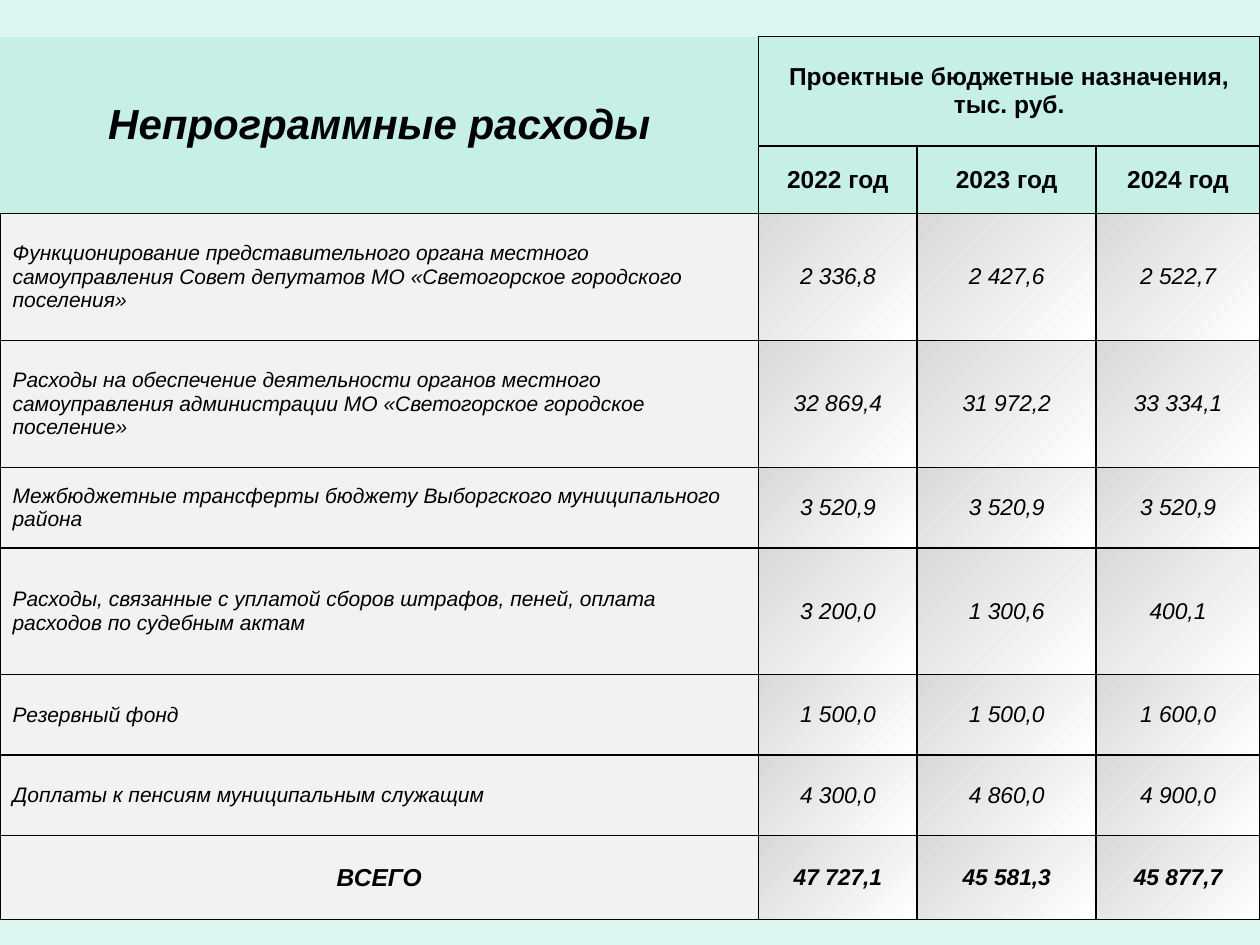
from lxml import etree
from pptx import Presentation
from pptx.dml.color import RGBColor
from pptx.enum.text import MSO_ANCHOR, PP_ALIGN
from pptx.oxml.ns import qn
from pptx.util import Inches, Pt

LEFT, CENTER = PP_ALIGN.LEFT, PP_ALIGN.CENTER
MIDDLE = MSO_ANCHOR.MIDDLE

BLACK = RGBColor(0x00, 0x00, 0x00)
WHITE = RGBColor(0xFF, 0xFF, 0xFF)
PALE_MINT = RGBColor(0xDE, 0xF6, 0xF1)
MINT = RGBColor(0xC6, 0xF0, 0xE7)
LIGHT_GRAY = RGBColor(0xF2, 0xF2, 0xF2)
GRAY = RGBColor(0xD9, 0xD9, 0xD9)

COLUMN_WIDTHS = [6.02, 1.26, 1.42, 1.3]
ROW_HEIGHTS = [0.87, 0.54, 1.01, 1.01, 0.64, 1.01, 0.64, 0.64, 0.67]
YEARS = ["2022 год", "2023 год", "2024 год"]
EXPENSES = [
    ("Функционирование представительного органа местного самоуправления "
     "Совет депутатов МО «Светогорское городского поселения»",
     "2 336,8", "2 427,6", "2 522,7"),
    ("Расходы на обеспечение деятельности органов местного самоуправления "
     "администрации МО «Светогорское городское поселение»",
     "32 869,4", "31 972,2", "33 334,1"),
    ("Межбюджетные трансферты бюджету Выборгского муниципального района",
     "3 520,9", "3 520,9", "3 520,9"),
    ("Расходы, связанные с уплатой сборов штрафов, пеней, оплата расходов "
     "по судебным актам", "3 200,0", "1 300,6", "400,1"),
    ("Резервный фонд", "1 500,0", "1 500,0", "1 600,0"),
    ("Доплаты к пенсиям муниципальным служащим",
     "4 300,0", "4 860,0", "4 900,0"),
    ("ВСЕГО", "47 727,1", "45 581,3", "45 877,7"),
]


def write_cell(cell, text, size, bold=False, italic=False, align=CENTER):
    cell.vertical_anchor = MIDDLE
    cell.margin_left = cell.margin_right = Inches(0.1)
    cell.margin_top = cell.margin_bottom = Inches(0.05)
    paragraph = cell.text_frame.paragraphs[0]
    paragraph.alignment = align
    run = paragraph.add_run()
    run.text = text
    run.font.name = "Arial"
    run.font.size = Pt(size)
    run.font.bold = bold
    run.font.italic = italic
    run.font.color.rgb = BLACK


def fill_solid(cell, color):
    cell.fill.solid()
    cell.fill.fore_color.rgb = color


def fill_gradient(cell):
    cell.fill.gradient()
    cell.fill.gradient_angle = 315
    for stop, color in zip(cell.fill.gradient_stops, (GRAY, WHITE)):
        stop.color.rgb = color


def add_borders(cell, visible_sides):
    properties = cell._tc.get_or_add_tcPr()
    for position, side in enumerate("LRTB"):
        border = etree.Element(qn(f"a:ln{side}"), w=str(Pt(1)))
        if side in visible_sides:
            fill = etree.SubElement(border, qn("a:solidFill"))
            etree.SubElement(fill, qn("a:srgbClr"), val=str(BLACK))
        else:
            etree.SubElement(border, qn("a:noFill"))
        properties.insert(position, border)


def add_header(table):
    heading = table.cell(0, 0)
    heading.merge(table.cell(1, 0))
    write_cell(heading, "Непрограммные расходы", 24, bold=True, italic=True)
    budget = table.cell(0, 1)
    budget.merge(table.cell(0, 3))
    write_cell(budget, "Проектные бюджетные назначения, тыс. руб.", 14, bold=True)
    for column, year in enumerate(YEARS, start=1):
        write_cell(table.cell(1, column), year, 14, bold=True)
    for row in range(2):
        for column in range(4):
            cell = table.cell(row, column)
            fill_solid(cell, MINT)
            add_borders(cell, "LRTB" if column else "RB" if row else "R")


def add_expenses(table):
    for row, (name, *amounts) in enumerate(EXPENSES, start=2):
        total = row == len(ROW_HEIGHTS) - 1
        name_cell = table.cell(row, 0)
        write_cell(name_cell, name, 14 if total else 12, total, True,
                   CENTER if total else LEFT)
        fill_solid(name_cell, LIGHT_GRAY)
        add_borders(name_cell, "LRTB")
        for column, amount in enumerate(amounts, start=1):
            cell = table.cell(row, column)
            write_cell(cell, amount, 13, total, True)
            fill_gradient(cell)
            add_borders(cell, "LRTB")


def add_budget_table(slide, left, top, width, height):
    table = slide.shapes.add_table(
        len(ROW_HEIGHTS), len(COLUMN_WIDTHS), left, top, width, height).table
    table.first_row = table.horz_banding = False
    for column, share in zip(table.columns, COLUMN_WIDTHS):
        column.width = int(width * share / sum(COLUMN_WIDTHS))
    for row, share in zip(table.rows, ROW_HEIGHTS):
        row.height = int(height * share / sum(ROW_HEIGHTS))
    add_header(table)
    add_expenses(table)


def main():
    presentation = Presentation()
    presentation.slide_width = Inches(10)
    presentation.slide_height = Inches(7.5)
    slide = presentation.slides.add_slide(presentation.slide_layouts[6])
    slide.background.fill.solid()
    slide.background.fill.fore_color.rgb = PALE_MINT
    add_budget_table(slide, 0, Inches(0.29), Inches(10), Inches(7.01))
    presentation.save("out.pptx")


if __name__ == "__main__":
    main()
